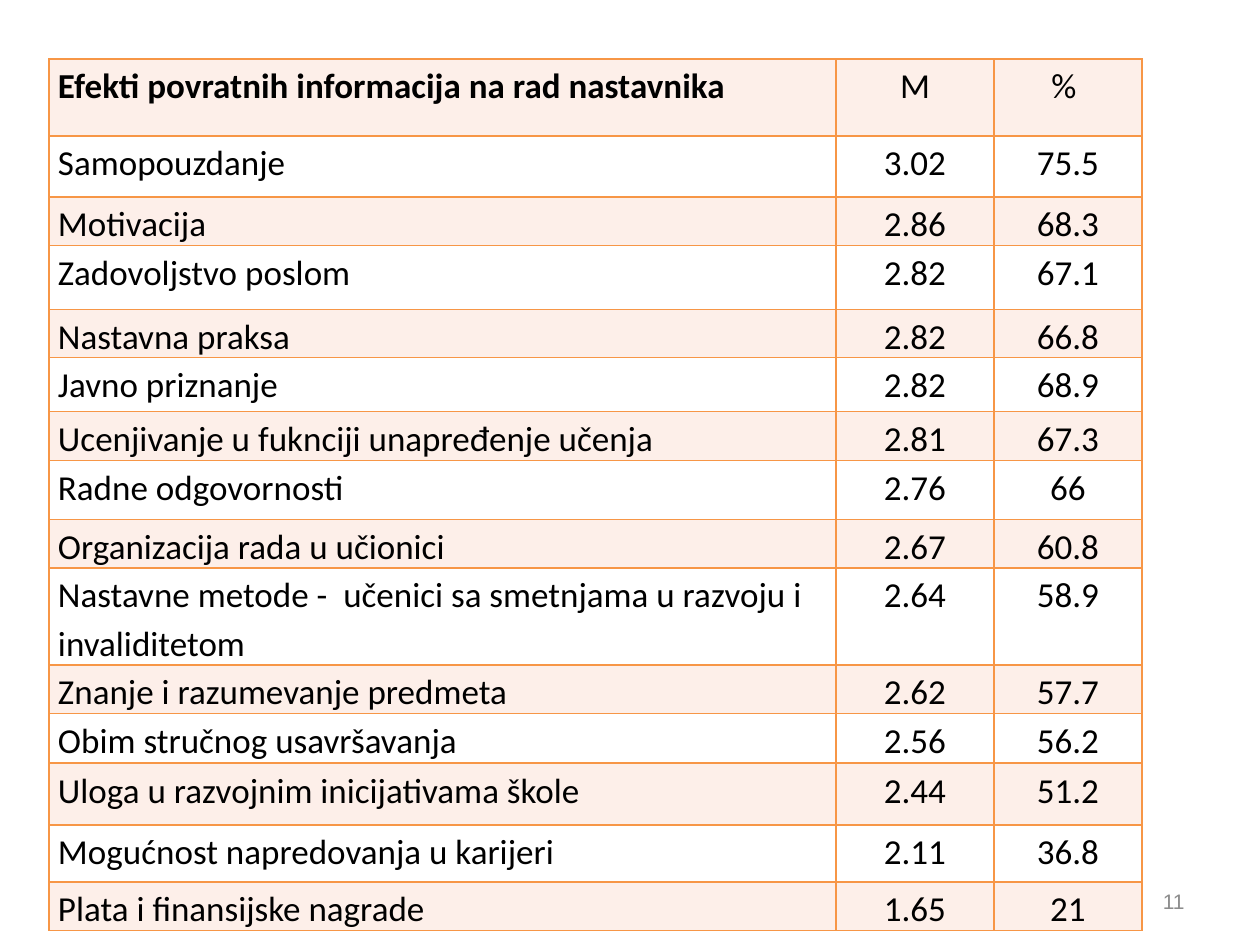
from lxml import etree
from pptx import Presentation
from pptx.dml.color import RGBColor as RGB
from pptx.enum.text import MSO_ANCHOR as Anchor, PP_ALIGN as Align
from pptx.oxml.ns import qn
from pptx.util import Emu, Pt

BLACK = RGB(0x00, 0x00, 0x00)
WHITE = RGB(0xFF, 0xFF, 0xFF)
PEACH = RGB(0xFD, 0xEF, 0xE9)
ORANGE = RGB(0xF7, 0x96, 0x46)
GRAY = RGB(0x8C, 0x8C, 0x8C)

COLS = [787, 158, 148]
# Row height, effect, mean, percent
ROWS = [
    (77, "Efekti povratnih informacija na rad nastavnika", "M", "% "),
    (61, "Samopouzdanje", "3.02", "75.5"),
    (39, "Motivacija", "2.86", "68.3"),
    (64, "Zadovoljstvo poslom", "2.82", "67.1"),
    (39, "Nastavna praksa", "2.82", "66.8"),
    (54, "Javno priznanje", "2.82", "68.9"),
    (49, "Ucenjivanje u fuknciji unapređenje učenja", "2.81", "67.3"),
    (59, "Radne odgovornosti", "2.76", "66"),
    (39, "Organizacija rada u učionici", "2.67", "60.8"),
    (97, "Nastavne metode -  učenici sa smetnjama u razvoju i invaliditetom",
     "2.64", "58.9"),
    (39, "Znanje i razumevanje predmeta", "2.62", "57.7"),
    (50, "Obim stručnog usavršavanja", "2.56", "56.2"),
    (62, "Uloga u razvojnim inicijativama škole", "2.44", "51.2"),
    (57, "Mogućnost napredovanja u karijeri", "2.11", "36.8"),
    (39, "Plata i finansijske nagrade", "1.65", "21"),
]


def px(n):
    return Emu(round(n * 914400 / 126))


def style(para, name, size, color, align, bold=False):
    para.alignment = align
    for run in para.runs:
        font = run.font
        font.name, font.size, font.bold = name, Pt(size), bold
        font.color.rgb = color


def border(cell):
    props = cell._tc.get_or_add_tcPr()
    # Border lines come before the fill
    for pos, side in enumerate(("lnL", "lnR", "lnT", "lnB")):
        line = etree.Element(qn("a:" + side), w=str(Pt(1)))
        fill = etree.SubElement(line, qn("a:solidFill"))
        etree.SubElement(fill, qn("a:srgbClr"), val=str(ORANGE))
        props.insert(pos, line)


def fill_cell(cell, text, color, align, bold):
    cell.fill.solid()
    cell.fill.fore_color.rgb = color
    cell.margin_left = cell.margin_right = px(9)
    cell.margin_top = cell.margin_bottom = 0
    cell.text_frame.text = text
    para = cell.text_frame.paragraphs[0]
    para.line_spacing = 1.15
    style(para, "Calibri", 20, BLACK, align, bold)
    border(cell)


def add_grid(slide, left, top):
    high = sum(row[0] for row in ROWS)
    grid = slide.shapes.add_table(len(ROWS), len(COLS), px(left), px(top),
                                  px(sum(COLS)), px(high)).table
    for col, wide in zip(grid.columns, COLS):
        col.width = px(wide)
    for r, (tall, *texts) in enumerate(ROWS):
        grid.rows[r].height = px(tall)
        color = WHITE if r % 2 else PEACH
        for c, text in enumerate(texts):
            align = Align.CENTER if c else Align.LEFT
            fill_cell(grid.cell(r, c), text, color, align, r == c == 0)


def add_label(slide, text, left, top, wide, high):
    frame = slide.shapes.add_textbox(px(left), px(top),
                                     px(wide), px(high)).text_frame
    frame.word_wrap = True
    frame.vertical_anchor = Anchor.MIDDLE
    frame.text = text
    style(frame.paragraphs[0], "Arial", 12, GRAY, Align.RIGHT)


def main():
    deck = Presentation()
    deck.slide_width, deck.slide_height = px(1260), px(945)
    slide = deck.slides.add_slide(deck.slide_layouts[6])
    # Page number
    add_label(slide, "11", 903, 876, 294, 50)
    # Feedback effects table
    add_grid(slide, 49, 59)
    deck.save("out.pptx")


if __name__ == "__main__":
    main()
